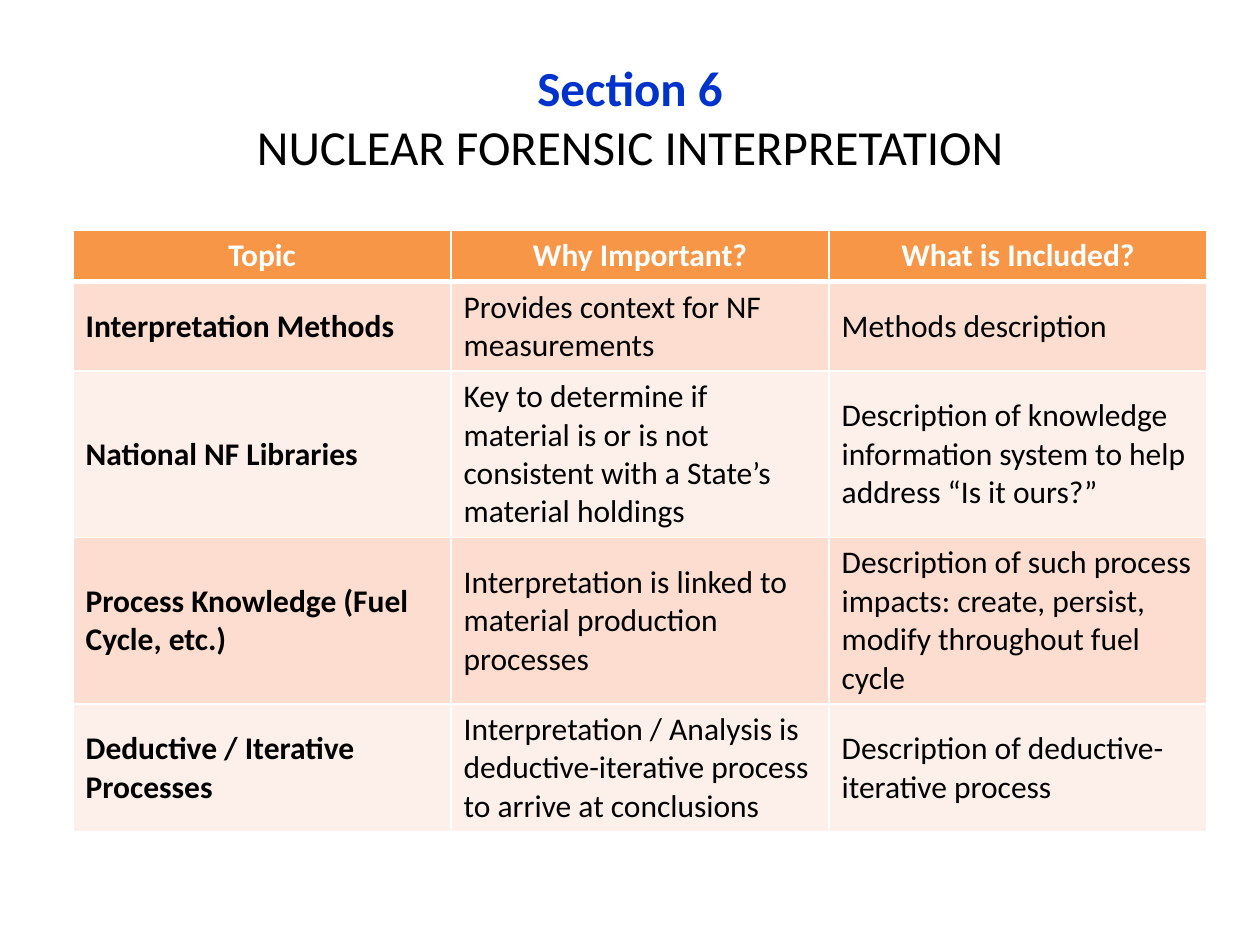
from lxml.etree import SubElement
from pptx import Presentation
from pptx.dml.color import RGBColor
from pptx.enum.text import MSO_ANCHOR, PP_ALIGN
from pptx.oxml.ns import qn
from pptx.util import Inches, Pt

BLUE = RGBColor(0x00, 0x33, 0xCC)
BLACK = RGBColor(0x00, 0x00, 0x00)
WHITE = RGBColor(0xFF, 0xFF, 0xFF)
ORANGE = RGBColor(0xF7, 0x96, 0x46)
PEACH = RGBColor(0xFC, 0xDD, 0xCF)
PALE_PEACH = RGBColor(0xFD, 0xEF, 0xE9)

TITLE_LINES = [
    ("Section 6", {"bold": True, "color": BLUE}),
    ("NUCLEAR FORENSIC INTERPRETATION", {"bold": False, "color": BLACK}),
]
TOPICS = [
    ("Topic", "Why Important?", "What is Included?"),
    ("Interpretation Methods", "Provides context for NF measurements", "Methods description"),
    (
        "National NF Libraries",
        "Key to determine if material is or is not consistent with a State’s material holdings",
        "Description of knowledge information system to help address “Is it ours?”",
    ),
    (
        "Process Knowledge (Fuel Cycle, etc.)",
        "Interpretation is linked to material production processes",
        "Description of such process impacts: create, persist, modify throughout fuel cycle",
    ),
    (
        "Deductive / Iterative Processes",
        "Interpretation / Analysis is deductive-iterative process to arrive at conclusions",
        "Description of deductive-iterative process",
    ),
]
ROW_HEIGHTS = [0.4, 0.7, 1.32, 1.32, 1.01]


class SlideBuilder:
    font_name = "Calibri"
    title_size = Pt(28)
    table_size = Pt(18)

    def __init__(self, deck):
        self.slide = deck.slides.add_slide(deck.slide_layouts[5])

    def add_span(self, para, text, color, **values):
        span = para.add_run()
        span.text = text
        for name, value in {"name": self.font_name, **values}.items():
            setattr(span.font, name, value)
        span.font.color.rgb = color

    def add_title(self, lines, left, top, width, height):
        title = self.slide.shapes.title
        place = {"left": left, "top": top, "width": width, "height": height}
        for name, value in place.items():
            setattr(title, name, Inches(value))
        title.text_frame.vertical_anchor = MSO_ANCHOR.MIDDLE
        para = title.text_frame.paragraphs[0]
        para.alignment = PP_ALIGN.CENTER
        for index, (text, values) in enumerate(lines):
            if index:
                para.add_line_break()
            self.add_span(para, text, size=self.title_size, **values)

    def add_borders(self, cell, widths):
        properties = cell._tc.get_or_add_tcPr()
        for side, width in widths.items():
            line = SubElement(properties, qn(f"a:ln{side}"), w=str(Pt(width)))
            fill = SubElement(line, qn("a:solidFill"))
            SubElement(fill, qn("a:srgbClr"), val=str(WHITE))

    def add_cell(self, cell, text, row, column):
        is_header = row == 0
        self.add_borders(
            cell, {"L": 1, "R": 1, "T": 3 if row == 1 else 1, "B": 3 if is_header else 1}
        )
        cell.fill.solid()
        cell.fill.fore_color.rgb = ORANGE if is_header else (PALE_PEACH, PEACH)[row % 2]
        cell.vertical_anchor = MSO_ANCHOR.TOP if is_header else MSO_ANCHOR.MIDDLE
        para = cell.text_frame.paragraphs[0]
        para.alignment = PP_ALIGN.CENTER if is_header else PP_ALIGN.LEFT
        self.add_span(
            para,
            text,
            WHITE if is_header else BLACK,
            size=self.table_size,
            bold=is_header or column == 0,
        )

    def add_table(self, rows, heights, left, top, width):
        frame = self.slide.shapes.add_table(
            len(rows), len(rows[0]), Inches(left), Inches(top), Inches(width), Inches(sum(heights))
        )
        table = frame.table
        for row, (texts, height) in enumerate(zip(rows, heights)):
            table.rows[row].height = Inches(height)
            for column, text in enumerate(texts):
                self.add_cell(table.cell(row, column), text, row, column)


def main():
    deck = Presentation()
    deck.slide_width = Inches(10)
    deck.slide_height = Inches(7.5)
    page = SlideBuilder(deck)
    page.add_title(TITLE_LINES, 0.5, 0.3, 9, 1.25)
    page.add_table(TOPICS, ROW_HEIGHTS, 0.58, 1.83, 9)
    deck.save("out.pptx")


if __name__ == "__main__":
    main()
